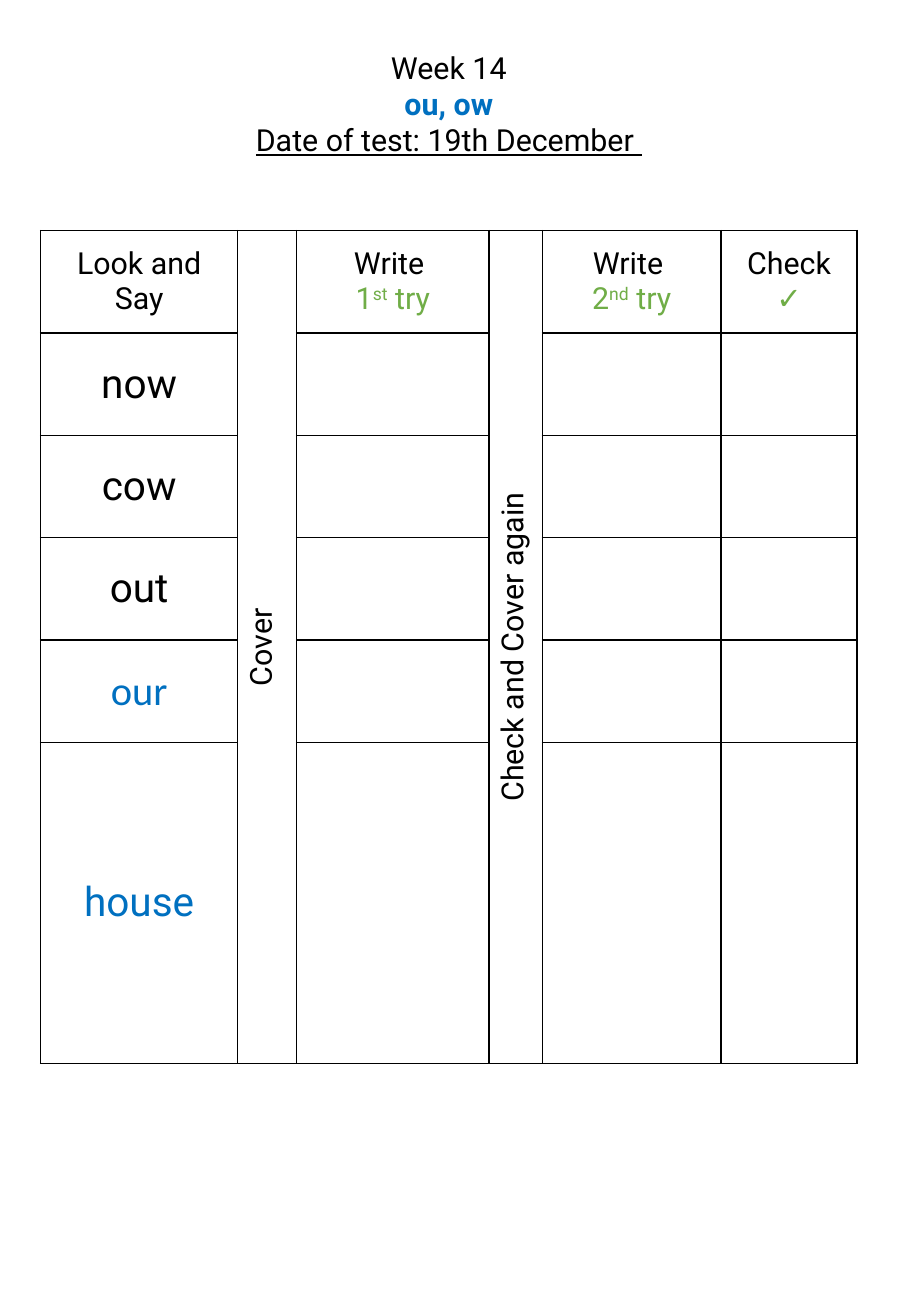
"""Build a weekly spelling practice sheet with a look, cover, write, check table."""
from dataclasses import dataclass

from lxml import etree
from pptx import Presentation
from pptx import util as u
from pptx.dml.color import RGBColor
from pptx.enum import text
from pptx.oxml import ns
from pptx.table import _Cell
from pptx.text.text import TextFrame

COLOURS = {"ink": "000000", "paper": "FFFFFF", "sound": "0070C0", "attempt": "70AD47"}
COLUMN_WIDTHS = (4.12, 1.23, 4.03, 1.11, 3.74, 2.84)
ROW_HEIGHT = 2.14
LEFT = 0.85
TABLE_TOP = 4.82


@dataclass(frozen=True)
class Piece:
    wording: str
    colour: str = "ink"
    size: int = 18
    font: str = "Roboto"
    bold: bool = False
    underline: bool = False
    raised: bool = False


Lines = list[list[Piece]]

HEADING: Lines = [
    [Piece("Week 14")],
    [Piece("ou, ow", "sound", bold=True)],
    [Piece("Date of test: 19th December ", underline=True)],
]
WORDS = [
    Piece("now", size=24),
    Piece("cow", size=24),
    Piece("out", size=24),
    Piece("our", "sound", 24, "Calibri"),
    Piece("house", "sound", 24),
]


def attempt(number: str, ending: str) -> Lines:
    """Return the heading lines of one writing attempt."""
    return [
        [Piece("Write ")],
        [Piece(number, "attempt"), Piece(ending, "attempt", raised=True), Piece(" try", "attempt")],
    ]


STEPS: list[Lines] = [
    [[Piece("Look and Say")]],
    [[Piece("Cover")]],
    attempt("1", "st"),
    [[Piece("Check and Cover again")]],
    attempt("2", "nd"),
    [[Piece("Check")], [Piece("✓", "attempt")]],
]
COVER_COLUMNS = (1, 3)


def write(frame: TextFrame, lines: Lines) -> None:
    """Write centred lines of formatted pieces into a text frame."""
    frame.text = "\n".join("" for _ in lines)
    for paragraph, pieces in zip(frame.paragraphs, lines):
        paragraph.alignment = text.PP_ALIGN.CENTER
        for piece in pieces:
            run = paragraph.add_run()
            run.text = piece.wording
            run.font.name = piece.font
            run.font.size = u.Pt(piece.size)
            run.font.bold = piece.bold
            run.font.underline = piece.underline
            run.font.color.rgb = RGBColor.from_string(COLOURS[piece.colour])
            if piece.raised:
                run.font._element.set("baseline", "30000")


def rule_cell(cell: _Cell) -> None:
    """Give a cell thin borders, a plain fill and middle anchoring."""
    properties = cell._tc.get_or_add_tcPr()
    for side in ("lnL", "lnR", "lnT", "lnB"):
        border = etree.SubElement(properties, ns.qn(f"a:{side}"), w=str(u.Pt(1)))
        fill = etree.SubElement(border, ns.qn("a:solidFill"))
        etree.SubElement(fill, ns.qn("a:srgbClr"), val=COLOURS["ink"])
    cell.fill.solid()
    cell.fill.fore_color.rgb = RGBColor.from_string(COLOURS["paper"])
    cell.vertical_anchor = text.MSO_ANCHOR.MIDDLE


def main() -> None:
    """Build and save the spelling sheet."""
    deck = Presentation()
    deck.slide_width, deck.slide_height = u.Cm(19.05), u.Cm(27.51)
    sheet = deck.slides.add_slide(deck.slide_layouts[5])
    table_width = u.Cm(sum(COLUMN_WIDTHS))

    heading = sheet.shapes.title
    heading.left, heading.top = u.Cm(LEFT), u.Cm(0.89)
    heading.width, heading.height = table_width, u.Cm(2.57)
    heading.text_frame.vertical_anchor = text.MSO_ANCHOR.TOP
    heading.text_frame.auto_size = text.MSO_AUTO_SIZE.SHAPE_TO_FIT_TEXT
    write(heading.text_frame, HEADING)

    row_count = len(WORDS) + 1
    practice = sheet.shapes.add_table(
        row_count, len(STEPS), u.Cm(LEFT), u.Cm(TABLE_TOP), table_width, u.Cm(ROW_HEIGHT * row_count)
    ).table
    practice.first_row = practice.horz_banding = False
    for column, width in zip(practice.columns, COLUMN_WIDTHS):
        column.width = u.Cm(width)
    for row in practice.rows:
        row.height = u.Cm(ROW_HEIGHT)
    for cell in practice.iter_cells():
        rule_cell(cell)
    for index, step in enumerate(STEPS):
        write(practice.cell(0, index).text_frame, step)
    for index, word in enumerate(WORDS, start=1):
        write(practice.cell(index, 0).text_frame, [[word]])
    for index in COVER_COLUMNS:
        cover = practice.cell(0, index)
        cover.merge(practice.cell(row_count - 1, index))
        cover._tc.get_or_add_tcPr().set("vert", "vert270")

    deck.save("out.pptx")


if __name__ == "__main__":
    main()
